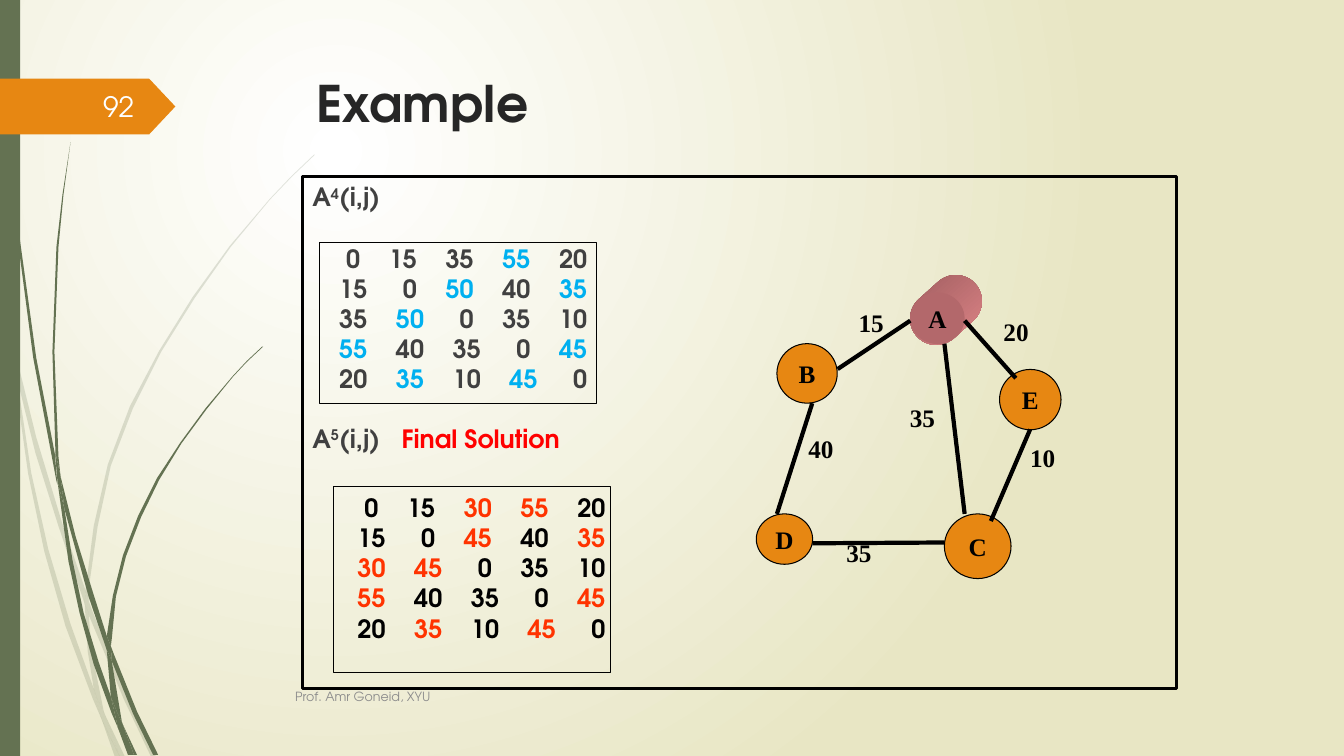
from itertools import groupby

from lxml.etree import SubElement
from pptx import Presentation
from pptx.dml.color import RGBColor
from pptx.enum.shapes import MSO_CONNECTOR, MSO_SHAPE
from pptx.enum.text import MSO_ANCHOR, PP_ALIGN
from pptx.oxml import parse_xml
from pptx.oxml.ns import nsdecls, qn
from pptx.util import Cm, Pt

BLACK = RGBColor(0x00, 0x00, 0x00)
WHITE = RGBColor(0xFE, 0xFF, 0xFF)
GREEN = RGBColor(0x64, 0x72, 0x52)
ORANGE = RGBColor(0xE7, 0x87, 0x12)
TITLE_GREY = RGBColor(0x26, 0x26, 0x26)
TEXT_GREY = RGBColor(0x40, 0x40, 0x40)
FOOTER_GREY = RGBColor(0x8C, 0x8C, 0x8C)
BLUE = RGBColor(0x00, 0xB0, 0xF0)
RED = RGBColor(0xFF, 0x00, 0x00)
ORANGE_RED = RGBColor(0xFF, 0x33, 0x00)
ROSE = RGBColor(0xB3, 0x68, 0x6B)
DARK_ROSE = RGBColor(0x96, 0x58, 0x5A)
LIGHT_ROSE = RGBColor(0xE8, 0x8A, 0x8D)
SANS, SERIF = "TeX Gyre Adventor", "Times New Roman"


def add_run(paragraph, text, size=18, color=BLACK, bold=True, font=SANS, raised=False):
    run = paragraph.add_run()
    run.text = text
    run.font.name, run.font.size, run.font.bold = font, Pt(size), bold
    run.font.color.rgb = color
    if raised:
        run._r.get_or_add_rPr().set("baseline", "30000")


def style(shape, fill=None, line=None, width=0.75):
    shape.shadow.inherit = False
    if fill is None:
        shape.fill.background()
    else:
        shape.fill.solid()
        shape.fill.fore_color.rgb = fill
    if line is None:
        shape.line.fill.background()
    else:
        shape.line.color.rgb = line
        shape.line.width = Pt(width)
    return shape


presentation = Presentation()
presentation.slide_width, presentation.slide_height = Cm(33.87), Cm(19.05)
slide = presentation.slides.add_slide(presentation.slide_layouts[5])
shapes = slide.shapes

# Background: radial gradient from the upper left
slide.background.fill.solid()
background = slide._element.cSld.find(qn("p:bg")).find(qn("p:bgPr"))
background.replace(background[0], parse_xml(
    f'<a:gradFill {nsdecls("a")} rotWithShape="1"><a:gsLst>'
    '<a:gs pos="0"><a:srgbClr val="FFFFFF"/></a:gs>'
    '<a:gs pos="100000"><a:srgbClr val="E8E6C4"/></a:gs></a:gsLst>'
    '<a:path path="circle"><a:fillToRect l="25000" t="20000" r="75000" b="80000"/></a:path>'
    '</a:gradFill>'))

# Grass blades: outline points in units of 0.0254 cm
pale_blades = [
    [(11, 350), (9, 322), (0, 282), (0, 299), (10, 344)],
    [(58, 522), (84, 599), (85, 586), (62, 520), (36, 434), (14, 345), (17, 376), (35, 449)],
    [(92, 607), (88, 596), (88, 610), (123, 694), (150, 751), (155, 751), (127, 692)],
    [(119, 751), (124, 751), (105, 711)],
    [(93, 683), (70, 619), (48, 545), (31, 469), (17, 376), (11, 350), (28, 470), (44, 547),
     (65, 621), (92, 693), (101, 714), (99, 707)],
    [(84, 599), (87, 646), (93, 683), (96, 692), (105, 711), (103, 706), (91, 646), (88, 610),
     (88, 608)],
    [(88, 584), (97, 522), (110, 462), (132, 405), (160, 349), (193, 296), (229, 245),
     (268, 198), (290, 175), (312, 154), (312, 153), (289, 175), (268, 197), (228, 244),
     (191, 295), (158, 348), (129, 403), (107, 461), (93, 522), (85, 584), (85, 586), (88, 596)],
    [(101, 714), (114, 751), (119, 751)],
    [(88, 608), (88, 610), (88, 596), (85, 586), (84, 599)],
    [(96, 692), (93, 683), (99, 707), (101, 714), (119, 751), (105, 711)],
]
dark_blades = [
    [(7, 110), (17, 233), (33, 355), (56, 477), (57, 481), (55, 457), (55, 453), (36, 355),
     (19, 232), (8, 109), (5, 48), (4, 0), (3, 0), (4, 48)],
    [(88, 592), (106, 645), (106, 631), (93, 590), (75, 532), (60, 472), (64, 505)],
    [(113, 649), (110, 641), (111, 656), (132, 708), (152, 749), (157, 749), (136, 706)],
    [(110, 691), (98, 657), (83, 608), (72, 556), (64, 505), (57, 477), (68, 557), (79, 608),
     (93, 659), (111, 708), (117, 722), (116, 717)],
    [(60, 472), (58, 453), (54, 349), (58, 245), (63, 193), (70, 141), (62, 193), (56, 245),
     (52, 349), (55, 449)],
    [(133, 749), (136, 749), (122, 719)],
    [(57, 477), (64, 505), (60, 472), (55, 449), (55, 453)],
    [(111, 633), (115, 592), (125, 552), (140, 513), (158, 476), (180, 440), (205, 406),
     (231, 374), (245, 359), (261, 344), (260, 344), (245, 358), (231, 373), (204, 405),
     (179, 439), (156, 474), (137, 512), (122, 551), (112, 591), (106, 631), (110, 641)],
    [(117, 722), (127, 749), (131, 749)],
    [(106, 645), (110, 691), (116, 706), (122, 719), (121, 716), (111, 656), (109, 651)],
    [(106, 645), (109, 651), (111, 656), (110, 641), (106, 631)],
    [(116, 706), (110, 691), (116, 717), (117, 722), (130, 749), (133, 749), (122, 719)],
]
for blades, opacity in [(pale_blades, 20), (dark_blades, 100)]:
    for outline in blades:
        builder = shapes.build_freeform(*outline[0], scale=Cm(2.54) / 100)
        builder.add_line_segments(outline[1:], close=True)
        blade = style(builder.convert_to_shape(), GREEN)
        if opacity < 100:
            color = blade.fill._xPr.find(qn("a:solidFill"))[0]
            SubElement(color, qn("a:alpha")).set("val", str(opacity * 1000))

# Side bar and page tag
style(shapes.add_shape(MSO_SHAPE.RECTANGLE, 0, 0, Cm(0.51), Cm(19.05)), GREEN)
tag = style(shapes.add_shape(MSO_SHAPE.PENTAGON, 0, Cm(1.98), Cm(4.42), Cm(1.41)), ORANGE)
tag.adjustments[0] = 0.47

# Footer and page number
for text, left, top, width, size, color, align in [
        ("Prof. Amr Goneid, XYU", 7.19, 17.04, 21.16, 9, FOOTER_GREY, PP_ALIGN.LEFT),
        ("92", 1.47, 2.18, 2.16, 20, WHITE, PP_ALIGN.RIGHT)]:
    frame = shapes.add_textbox(Cm(left), Cm(top), Cm(width), Cm(1.02)).text_frame
    frame.word_wrap = True
    frame.vertical_anchor = MSO_ANCHOR.MIDDLE
    frame.paragraphs[0].alignment = align
    add_run(frame.paragraphs[0], text, size=size, color=color, bold=False)

# Title
title = shapes.title
title.left, title.top, title.width, title.height = Cm(7.72), Cm(1.7), Cm(21.59), Cm(2.34)
title.text_frame.vertical_anchor = MSO_ANCHOR.TOP
title.text_frame.paragraphs[0].alignment = PP_ALIGN.LEFT
add_run(title.text_frame.paragraphs[0], "Example", size=36, color=TITLE_GREY)

# Panel with the two matrix headings
panel = style(shapes.add_shape(MSO_SHAPE.RECTANGLE, Cm(7.62), Cm(4.45), Cm(22.02), Cm(12.9)),
              line=BLACK, width=2.25)
panel.text_frame.vertical_anchor = MSO_ANCHOR.TOP
for power, note in [("4", ""), ("5", "\tFinal Solution")]:
    heading = panel.text_frame.paragraphs[0]
    if note:
        heading = panel.text_frame.add_paragraph()
        heading.space_before = Pt(151)
        tabs = SubElement(heading._p.get_or_add_pPr(), qn("a:tabLst"))
        SubElement(tabs, qn("a:tab"), pos=str(Cm(2.25)), algn="l")
    heading.alignment = PP_ALIGN.LEFT
    add_run(heading, "A", color=TEXT_GREY)
    add_run(heading, power, color=TEXT_GREY, raised=True)
    add_run(heading, "(i,j)", color=TEXT_GREY)
    if note:
        add_run(heading, note, color=RED)

# Distance matrices: right-aligned columns, improved cells in colour
matrices = [
    (8.05, 6.12, 4.04, 0, 1.03, TEXT_GREY, BLUE, {(0, 3), (1, 2), (1, 4), (3, 4)},
     [[0, 15, 35, 55, 20], [15, 0, 50, 40, 35], [35, 50, 0, 35, 10],
      [55, 40, 35, 0, 45], [20, 35, 10, 45, 0]]),
    (8.4, 12.27, 4.67, 0.13, 1.14, BLACK, ORANGE_RED,
     {(0, 2), (0, 3), (1, 2), (1, 4), (3, 4)},
     [[0, 15, 30, 55, 20], [15, 0, 45, 40, 35], [30, 45, 0, 35, 10],
      [55, 40, 35, 0, 45], [20, 35, 10, 45, 0]]),
]
for left, top, height, inset, first_tab, plain, accent, improved, rows in matrices:
    box = style(shapes.add_shape(MSO_SHAPE.RECTANGLE, Cm(left), Cm(top), Cm(6.99), Cm(height)),
                line=BLACK)
    frame = box.text_frame
    frame.vertical_anchor = MSO_ANCHOR.TOP
    frame.margin_left = frame.margin_right = frame.margin_bottom = 0
    frame.margin_top = Cm(inset)
    for i, row in enumerate(rows):
        paragraph = frame.paragraphs[0] if i == 0 else frame.add_paragraph()
        paragraph.alignment = PP_ALIGN.LEFT
        tabs = SubElement(paragraph._p.get_or_add_pPr(), qn("a:tabLst"))
        cells = []
        for j, distance in enumerate(row):
            stop = first_tab + 1.43 * j + (0.18 if i > j else 0)
            SubElement(tabs, qn("a:tab"), pos=str(Cm(stop)), algn="r")
            changed = (min(i, j), max(i, j)) in improved
            cells.append((accent if changed else plain, f"\t{distance}"))
        for color, group in groupby(cells, key=lambda cell: cell[0]):
            add_run(paragraph, "".join(text for _, text in group), color=color)

# Graph nodes, with node A as a raised cylinder
cylinder = style(shapes.add_shape(MSO_SHAPE.ROUNDED_RECTANGLE,
                                  Cm(22.85), Cm(7.15), Cm(1.98), Cm(1.32)), ROSE)
cylinder.adjustments[0] = 0.5
cylinder.rotation = -42
cylinder.fill.gradient()
cylinder.fill.gradient_angle = 270
for stop, color in zip(cylinder.fill.gradient_stops, (DARK_ROSE, LIGHT_ROSE)):
    stop.color.rgb = color
for name, left, top, width, height in [
        ("A", 22.94, 7.37, 1.37, 1.3), ("E", 25.19, 9.31, 1.55, 1.52),
        ("C", 23.8, 12.95, 1.68, 1.63), ("B", 19.58, 8.66, 1.52, 1.5),
        ("D", 19.06, 12.95, 1.42, 1.27)]:
    raised = name == "A"
    node = style(shapes.add_shape(MSO_SHAPE.OVAL, Cm(left), Cm(top), Cm(width), Cm(height)),
                 ROSE if raised else ORANGE, None if raised else BLACK)
    node.text_frame.word_wrap = False
    node.text_frame.vertical_anchor = MSO_ANCHOR.MIDDLE
    node.text_frame.paragraphs[0].alignment = PP_ALIGN.CENTER
    add_run(node.text_frame.paragraphs[0], name, font=SERIF)

# Graph edges with their weights
for x1, y1, x2, y2, weight, left, top in [
        (20.47, 10.16, 19.58, 12.95, 40, 20.12, 10.8),
        (22.94, 8.08, 21.11, 9.3, 15, 21.39, 7.62),
        (23.8, 8.66, 24.31, 12.95, 35, 22.68, 10.01),
        (24.31, 8.08, 25.6, 9.53, 20, 25.04, 7.85),
        (25.96, 10.82, 24.97, 13.13, 10, 25.71, 11.02),
        (20.47, 13.69, 23.8, 13.67, 35, 21.08, 13.41)]:
    edge = shapes.add_connector(MSO_CONNECTOR.STRAIGHT, Cm(x1), Cm(y1), Cm(x2), Cm(y2))
    edge.line.color.rgb = BLACK
    edge.line.width = Pt(3)
    SubElement(edge._element.spPr, qn("a:effectLst"))
    label = shapes.add_textbox(Cm(left), Cm(top), Cm(1.14), Cm(1.02))
    label.text_frame.word_wrap = False
    add_run(label.text_frame.paragraphs[0], str(weight), font=SERIF)

presentation.save("out.pptx")
